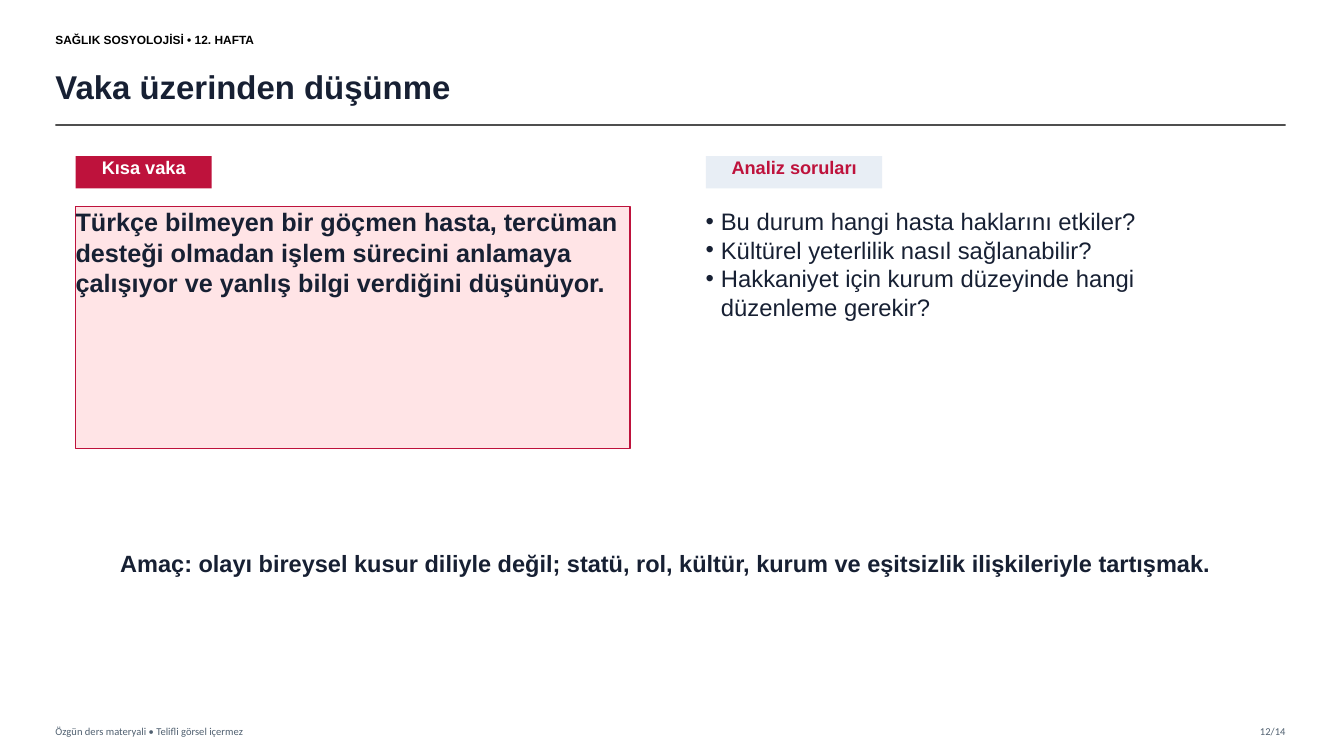
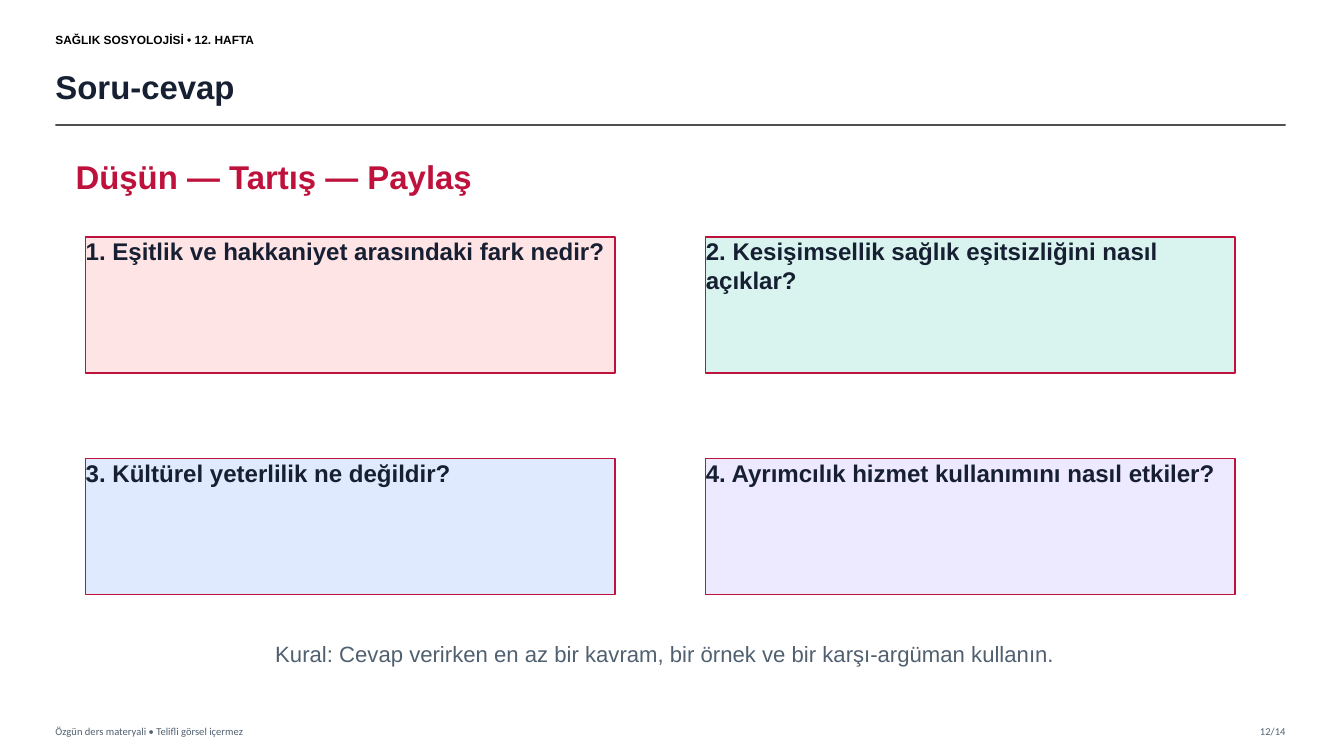
"""Build the case discussion and question slides of a health sociology lecture."""
from dataclasses import dataclass
from typing import Optional

from lxml.etree import SubElement
from pptx import Presentation
from pptx.dml.color import RGBColor
from pptx.enum.shapes import MSO_CONNECTOR, MSO_SHAPE
from pptx.enum.text import MSO_ANCHOR, MSO_AUTO_SIZE, PP_ALIGN
from pptx.oxml.ns import qn
from pptx.presentation import Presentation as Deck
from pptx.shapes.autoshape import Shape
from pptx.slide import Slide
from pptx.util import Inches, Pt

COLORS = {
    "ink": "172033",
    "black": "000000",
    "white": "FFFFFF",
    "crimson": "BE123C",
    "muted": "506070",
    "rule": "333333",
    "rose": "FFE4E6",
    "mist": "E8EEF5",
    "mint": "D9F3EE",
    "sky": "DFEAFE",
    "lilac": "EDE9FE",
}
MARGIN = 0.55
RIGHT_EDGE = 12.75
LEFT_COLUMN = 0.75
RIGHT_COLUMN = 7
BULLET_INDENT = 0.15


@dataclass(frozen=True)
class TextStyle:
    size: float
    color: str = "ink"
    bold: bool = True
    font: str = "Arial"
    align: PP_ALIGN = PP_ALIGN.LEFT
    anchor: MSO_ANCHOR = MSO_ANCHOR.TOP
    bulleted: bool = False


@dataclass(frozen=True)
class Block:
    left: float
    top: float
    width: float
    height: float
    lines: tuple[str, ...]
    style: TextStyle
    fill: Optional[str] = None
    outline: Optional[str] = None


TITLE = TextStyle(23.5, anchor=MSO_ANCHOR.MIDDLE)
COURSE = TextStyle(8.5, "black", anchor=MSO_ANCHOR.MIDDLE)
FOOTER = TextStyle(7.5, "muted", False, "Calibri", anchor=MSO_ANCHOR.MIDDLE)
PAGE = TextStyle(7.5, "muted", False, "Calibri", PP_ALIGN.RIGHT, MSO_ANCHOR.MIDDLE)
CASE_TAG = TextStyle(13, "white", align=PP_ALIGN.CENTER)
ANALYSIS_TAG = TextStyle(13, "crimson", align=PP_ALIGN.CENTER)
CASE = TextStyle(18)
ANALYSIS = TextStyle(17, bold=False, bulleted=True)
AIM = TextStyle(16.8, align=PP_ALIGN.CENTER)
METHOD = TextStyle(23.5, "crimson")
QUESTION = TextStyle(17.2)
RULE_NOTE = TextStyle(15.8, "muted", False, align=PP_ALIGN.CENTER)

FRAME_BLOCKS = (
    Block(MARGIN, 0.25, 3.6, 0.28, ("SAĞLIK SOSYOLOJİSİ • 12. HAFTA",), COURSE),
    Block(MARGIN, 7.14, 6, 0.22, ("Özgün ders materyali • Telifli görsel içermez",), FOOTER),
    Block(RIGHT_EDGE - 0.65, 7.14, 0.65, 0.22, ("12/14",), PAGE),
)

CASE_BLOCKS = (
    Block(LEFT_COLUMN, 1.55, 1.35, 0.32, ("Kısa vaka",), CASE_TAG, "crimson"),
    Block(LEFT_COLUMN, 2.05, 5.5, 2.4, (
        "Türkçe bilmeyen bir göçmen hasta, tercüman desteği olmadan işlem sürecini "
        "anlamaya çalışıyor ve yanlış bilgi verdiğini düşünüyor.",
    ), CASE, "rose", "crimson"),
    Block(RIGHT_COLUMN, 1.55, 1.75, 0.32, ("Analiz soruları",), ANALYSIS_TAG, "mist"),
    Block(RIGHT_COLUMN, 2.05, 5.4, 2.65, (
        "Bu durum hangi hasta haklarını etkiler?",
        "Kültürel yeterlilik nasıl sağlanabilir?",
        "Hakkaniyet için kurum düzeyinde hangi düzenleme gerekir?",
    ), ANALYSIS),
    Block(1.05, 5.45, 11.1, 0.6, (
        "Amaç: olayı bireysel kusur diliyle değil; statü, rol, kültür, kurum ve "
        "eşitsizlik ilişkileriyle tartışmak.",
    ), AIM),
)

QUESTIONS = (
    ("Eşitlik ve hakkaniyet arasındaki fark nedir?", "rose"),
    ("Kesişimsellik sağlık eşitsizliğini nasıl açıklar?", "mint"),
    ("Kültürel yeterlilik ne değildir?", "sky"),
    ("Ayrımcılık hizmet kullanımını nasıl etkiler?", "lilac"),
)
QUESTION_BLOCKS = (
    Block(LEFT_COLUMN, 1.55, 5.7, 0.5, ("Düşün — Tartış — Paylaş",), METHOD),
    *(
        Block((0.85, RIGHT_COLUMN)[index % 2], 2.35 + 2.2 * (index // 2), 5.25, 1.35,
              (f"{index + 1}. {question}",), QUESTION, fill, "crimson")
        for index, (question, fill) in enumerate(QUESTIONS)
    ),
    Block(1, 6.35, 11.2, 0.35, (
        "Kural: Cevap verirken en az bir kavram, bir örnek ve bir karşı-argüman kullanın.",
    ), RULE_NOTE),
)


def rgb(color: str) -> RGBColor:
    return RGBColor.from_string(COLORS[color])


def apply_format(target: object, values: dict[str, object]) -> None:
    for attribute, value in values.items():
        setattr(target, attribute, value)


def write_text(holder: Shape, lines: tuple[str, ...], style: TextStyle) -> None:
    frame = holder.text_frame
    apply_format(frame, {
        "margin_left": 0, "margin_top": 0, "margin_right": 0, "margin_bottom": 0,
        "word_wrap": True, "auto_size": MSO_AUTO_SIZE.NONE,
        "vertical_anchor": style.anchor,
    })
    for index, line in enumerate(lines):
        paragraph = frame.add_paragraph() if index else frame.paragraphs[0]
        paragraph.alignment = style.align
        if style.bulleted:
            properties = paragraph._p.get_or_add_pPr()
            properties.set("marL", str(Inches(BULLET_INDENT)))
            properties.set("indent", str(-Inches(BULLET_INDENT)))
            SubElement(properties, qn("a:buFont")).set("typeface", style.font)
            SubElement(properties, qn("a:buChar")).set("char", "•")
        run = paragraph.add_run()
        run.text = line
        apply_format(run.font, {
            "name": style.font, "size": Pt(style.size), "bold": style.bold,
        })
        run.font.color.rgb = rgb(style.color)


def draw_block(slide: Slide, block: Block) -> None:
    bounds = [Inches(n) for n in (block.left, block.top, block.width, block.height)]
    if block.fill:
        holder = slide.shapes.add_shape(MSO_SHAPE.RECTANGLE, *bounds)
        holder.shadow.inherit = False
        holder.fill.solid()
        holder.fill.fore_color.rgb = rgb(block.fill)
        if block.outline:
            holder.line.color.rgb = rgb(block.outline)
            holder.line.width = Pt(1)
        else:
            holder.line.fill.background()
    else:
        holder = slide.shapes.add_textbox(*bounds)
    write_text(holder, block.lines, block.style)


def draw_title_rule(slide: Slide) -> None:
    height = Inches(1.24)
    rule = slide.shapes.add_connector(
        MSO_CONNECTOR.STRAIGHT, Inches(MARGIN), height, Inches(RIGHT_EDGE), height)
    rule.line.color.rgb = rgb("rule")
    rule.line.width = Pt(1.2)
    properties = rule._element.spPr
    SubElement(next(properties.iter(qn("a:srgbClr"))), qn("a:alpha")).set("val", "85000")
    SubElement(properties, qn("a:effectLst"))


def add_slide(deck: Deck, title: str, blocks: tuple[Block, ...]) -> None:
    slide = deck.slides.add_slide(deck.slide_layouts.get_by_name("Title Only"))
    heading = slide.shapes.title
    apply_format(heading, {
        "left": Inches(MARGIN), "top": Inches(0.58),
        "width": Inches(11.95), "height": Inches(0.55),
    })
    write_text(heading, (title,), TITLE)
    draw_title_rule(slide)
    for block in FRAME_BLOCKS + blocks:
        draw_block(slide, block)


def main() -> None:
    deck = Presentation()
    apply_format(deck, {"slide_width": Inches(13.33), "slide_height": Inches(7.5)})
    add_slide(deck, "Vaka üzerinden düşünme", CASE_BLOCKS)
    add_slide(deck, "Soru-cevap", QUESTION_BLOCKS)
    deck.save("out.pptx")


if __name__ == "__main__":
    main()
